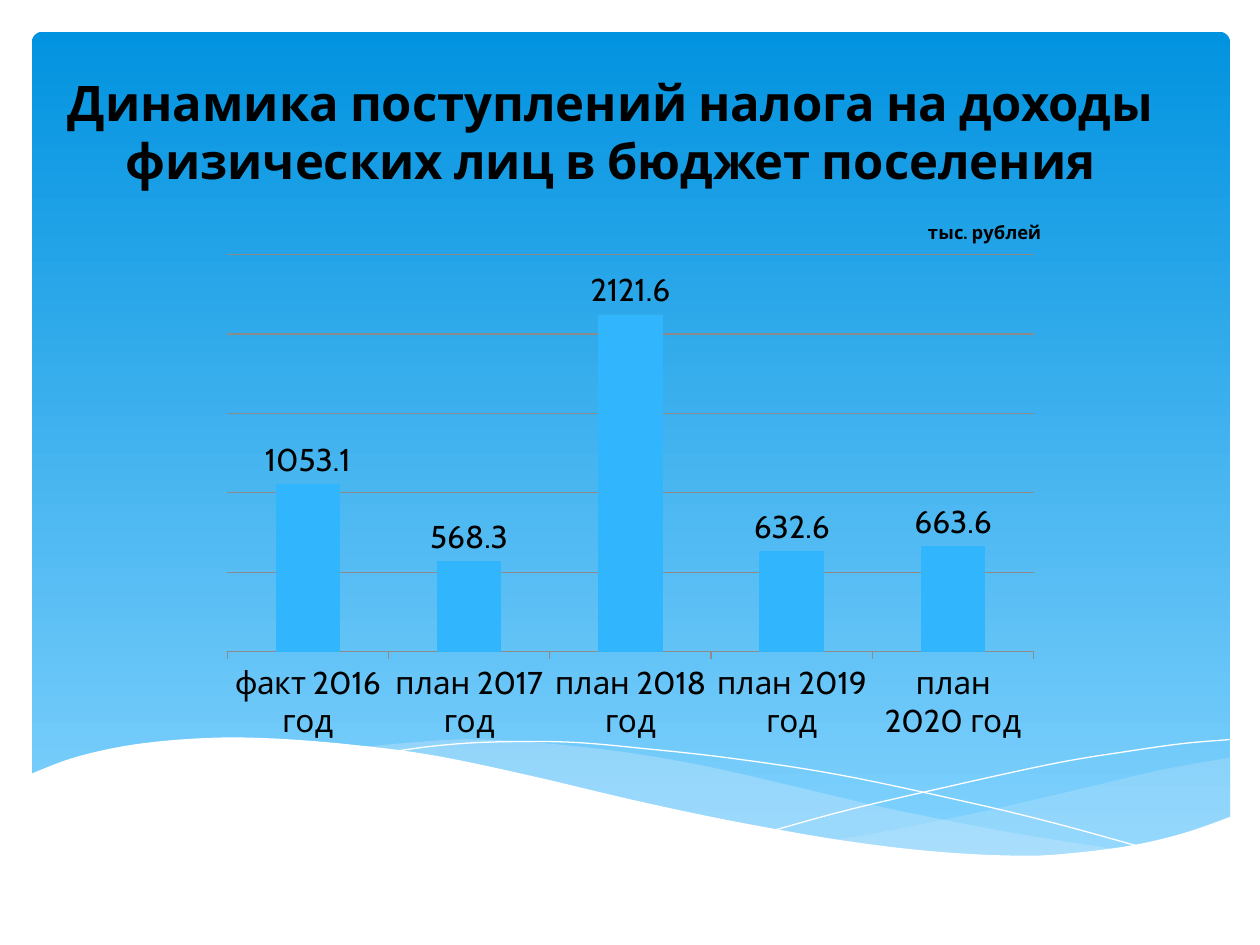
import pptx
import pptx.chart.data
import pptx.dml.color
import pptx.enum.chart
import pptx.enum.shapes
import pptx.enum.text
import pptx.oxml
import pptx.oxml.ns
import pptx.util

Cm, Pt = pptx.util.Cm, pptx.util.Pt

# Content
FONT = "Cabin"
TITLE = "Динамика поступлений налога на доходы физических лиц в бюджет поселения"
UNIT = "тыс. рублей"
DATA = [
    ("факт 2016 год", 1053.1),
    ("план 2017 год", 568.3),
    ("план 2018 год", 2121.6),
    ("план 2019 год", 632.6),
    ("план 2020 год", 663.6),
]

# Waves in cm: (edges, fill, opacity in %); an open wave has no fill
WAVES = [
    ([[(24.82, 15.27), (23.42, 15.52), (21.89, 15.88), (19.81, 16.36),
       (17.96, 16.74), (16.81, 16.94)],
      [(16.81, 16.94), (18.26, 17.12), (19.56, 17.25), (20.7, 17.27),
       (21.95, 17.2), (23.22, 16.99), (24.16, 16.74), (24.82, 16.48)]],
     "C6E7FC", 29),
    ([[(22.71, 17.15), (20.52, 16.81), (17.96, 16.31), (16, 15.85),
       (14.1, 15.42), (12.42, 15.14), (10.67, 14.96), (9.19, 14.91),
       (7.29, 15.06)],
      [(7.29, 15.06), (9.22, 15.34), (11.43, 15.85), (13.46, 16.31),
       (15.72, 16.76), (17.68, 17.07), (19.35, 17.25), (20.8, 17.27),
       (22.71, 17.15)]],
     "C6E7FC", 40),
    ([[(7.87, 15.16), (8.74, 15.04), (9.86, 14.96), (11.46, 14.96),
       (12.98, 15.09), (14.78, 15.29), (16.92, 15.62), (19.33, 16.13),
       (21.13, 16.56), (23.06, 17.09)]], None, 100),
    ([[(15.6, 16.74), (17.09, 16.33), (19.02, 15.88), (21.26, 15.39),
       (22.78, 15.14), (23.85, 14.99), (24.79, 14.91)]], None, 100),
    ([[(24.82, 16.46), (23.88, 16.79), (22.83, 17.04), (21.59, 17.2),
       (20.55, 17.25), (18.9, 17.17), (16.97, 16.94), (14.71, 16.54),
       (12.78, 16.13), (10.62, 15.62), (8.64, 15.21), (6.88, 14.99),
       (5.36, 14.88), (4.09, 14.88), (2.69, 15.01), (1.5, 15.27),
       (0.58, 15.62)],
      [(0.58, 18.57), (24.82, 18.57)]], "FFFFFF", 100),
]


def paint(part, code):
    """Give a fill a solid colour."""
    part.solid()
    part.fore_color.rgb = pptx.dml.color.RGBColor.from_string(code)


def style(font, size, bold=False):
    font.name, font.size, font.bold = FONT, Pt(size), bold
    paint(font.fill, "000000")


def smooth(edge, steps=6):
    """Run a Catmull-Rom curve through the points of an edge."""
    if len(edge) < 3:
        return edge
    ends = [edge[0]] + edge + [edge[-1]]
    out = [edge[0]]
    for a, b, c, d in zip(ends, ends[1:], ends[2:], ends[3:]):
        for k in range(1, steps + 1):
            t = k / steps
            out.append(tuple(
                0.5 * (2 * q + (r - p) * t + (2 * p - 5 * q + 4 * r - s) * t ** 2
                       + (3 * q - p - 3 * r + s) * t ** 3)
                for p, q, r, s in zip(a, b, c, d)))
    return out


def wave(edges, code, alpha):
    dots = [(Cm(x), Cm(y)) for edge in edges for x, y in smooth(edge)]
    pen = slide.shapes.build_freeform(*dots[0])
    pen.add_line_segments(dots[1:], close=code is not None)
    form = pen.convert_to_shape()
    form.shadow.inherit = False
    if code is None:
        form.fill.background()
        paint(form.line.fill, "FFFFFF")
        form.line.width = Pt(0)
        return
    paint(form.fill, code)
    form.line.fill.background()
    if alpha < 100:
        tint = form.fill._xPr.find(".//" + pptx.oxml.ns.qn("a:srgbClr"))
        tint.append(pptx.oxml.parse_xml(
            f'<a:alpha {pptx.oxml.ns.nsdecls("a")} val="{alpha * 1000}"/>'))


def layout(node, spot, inner=False, **dims):
    """Place a chart part by shares of the chart area."""
    for old in node.findall(pptx.oxml.ns.qn("c:layout")):
        node.remove(old)
    body = '<c:layoutTarget val="inner"/>' if inner else ""
    body += "".join(f'<c:{k}Mode val="edge"/>' for k in "xy")
    body += "".join(f'<c:{k} val="{v}"/>' for k, v in dims.items())
    node.insert(spot, pptx.oxml.parse_xml(
        f'<c:layout {pptx.oxml.ns.nsdecls("c")}><c:manualLayout>{body}'
        '</c:manualLayout></c:layout>'))


deck = pptx.Presentation()
deck.slide_width, deck.slide_height = Cm(25.4), Cm(19.05)
slide = deck.slides.add_slide(deck.slide_layouts[5])
title = slide.shapes.title

# Backdrop
panel = slide.shapes.add_shape(
    pptx.enum.shapes.MSO_SHAPE.ROUNDED_RECTANGLE,
    Cm(0.64), Cm(0.64), Cm(24.16), Cm(16.76))
panel.adjustments[0] = 0.013
panel.shadow.inherit = False
panel.line.fill.background()
panel.fill.gradient()
panel.fill.gradient_angle = 270
for stop, code, place in zip(panel.fill.gradient_stops, ("0293E0", "83D3FE"), (0, 1)):
    stop.color.rgb = pptx.dml.color.RGBColor.from_string(code)
    stop.position = place
for item in WAVES:
    wave(*item)

# Title, brought in front of the backdrop
slide.shapes._spTree.append(title._element)
title.left, title.top, title.width, title.height = Cm(0.71), Cm(1.32), Cm(23.19), Cm(2.64)
frame = title.text_frame
frame.text = TITLE
frame.word_wrap = True
frame.vertical_anchor = pptx.enum.text.MSO_ANCHOR.MIDDLE
frame.paragraphs[0].alignment = pptx.enum.text.PP_ALIGN.CENTER
style(frame.paragraphs[0].runs[0].font, 28, True)

# Chart
table = pptx.chart.data.CategoryChartData()
table.categories = [name for name, _ in DATA]
table.add_series("Series 1", [value for _, value in DATA])
chart = slide.shapes.add_chart(
    pptx.enum.chart.XL_CHART_TYPE.COLUMN_CLUSTERED,
    Cm(4.24), Cm(3.89), Cm(16.94), Cm(11.28), table).chart
style(chart.font, 18)
chart.has_legend = False
chart.has_title = True
head = chart.chart_title.text_frame
head.text = UNIT
style(head.paragraphs[0].runs[0].font, 10.5, True)
layout(chart.chart_title._element, 1, x=0.85, y=0.04)
layout(chart._chartSpace.chart.plotArea, 0, True, x=0.02, y=0.11, w=0.96, h=0.71)

# Axes
axis = chart.value_axis
axis.visible = False
axis.minimum_scale, axis.maximum_scale, axis.major_unit = 0, 2500, 500
axis.has_major_gridlines = True
low = chart.category_axis
low.major_tick_mark = pptx.enum.chart.XL_TICK_MARK.OUTSIDE
for line in (axis.major_gridlines.format.line, low.format.line):
    paint(line.fill, "8B8B8B")
    line.width = Pt(0.75)

# Columns
plot = chart.plots[0]
plot.gap_width = 150
plot.vary_by_categories = False
paint(plot.series[0].format.fill, "31B6FD")
plot.has_data_labels = True
marks = plot.data_labels
marks.show_value = True
marks.position = pptx.enum.chart.XL_LABEL_POSITION.OUTSIDE_END
style(marks.font, 18)

deck.save("out.pptx")
